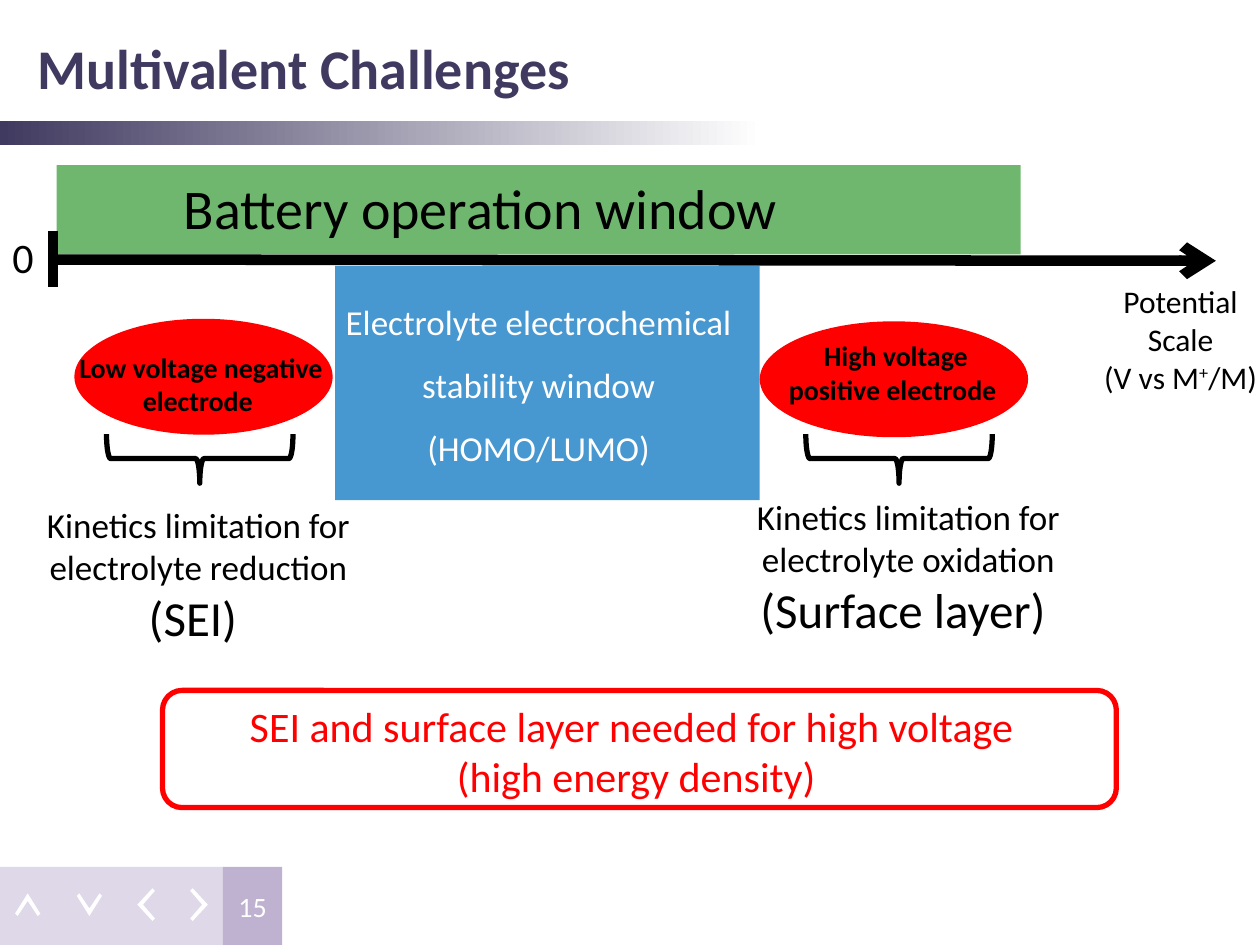
from dataclasses import dataclass

from lxml import etree
from pptx import Presentation
from pptx.dml.color import RGBColor
from pptx.enum.shapes import MSO_CONNECTOR, MSO_SHAPE
from pptx.enum.text import MSO_ANCHOR, MSO_AUTO_SIZE, PP_ALIGN
from pptx.oxml.ns import qn
from pptx.util import Inches, Pt

RECT, ROUND, OVAL, BRACE = (MSO_SHAPE.RECTANGLE, MSO_SHAPE.ROUNDED_RECTANGLE,
                            MSO_SHAPE.OVAL, MSO_SHAPE.RIGHT_BRACE)
STRAIGHT = MSO_CONNECTOR.STRAIGHT
LEFT, CENTER = PP_ALIGN.LEFT, PP_ALIGN.CENTER
MIDDLE, TOP = MSO_ANCHOR.MIDDLE, MSO_ANCHOR.TOP
TITLE_ONLY = 5
COLS, ROWS = 100, 75  # square grid cells over the whole slide


@dataclass(frozen=True)
class Theme:
    font: str = "Calibri"
    ink: str = "000000"
    paper: str = "FFFFFF"
    title: str = "403A60"
    nav: str = "DFD8E8"
    number: str = "BFB2D0"
    battery: str = "339933"
    electrolyte: str = "0070C0"
    alert: str = "FF0000"
    heading: int = 32
    large: int = 28
    medium: int = 24
    body: int = 20
    label: int = 18
    small: int = 16
    thick: int = 6
    thin: int = 3


class SlideBuilder:
    def __init__(self, prs, theme):
        self.theme = theme
        self.cell_w, self.cell_h = prs.slide_width / COLS, prs.slide_height / ROWS
        self.s = prs.slides.add_slide(prs.slide_layouts[TITLE_ONLY])

    def x(self, cols):
        return round(cols * self.cell_w)

    def y(self, rows):
        return round(rows * self.cell_h)

    def box(self, left, top, width, height):
        return self.x(left), self.y(top), self.x(width), self.y(height)

    def set_text(self, shape, lines, size, color=None, bold=False, align=CENTER,
                 anchor=TOP, spacing=None):
        """Fill a shape with lines: text or (text, size); ^ encloses superscript."""
        tf = shape.text_frame
        tf.word_wrap, tf.auto_size = True, MSO_AUTO_SIZE.NONE
        tf.vertical_anchor = anchor
        for i, line in enumerate(lines):
            text, pt = line if isinstance(line, tuple) else (line, size)
            p = tf.add_paragraph() if i else tf.paragraphs[0]
            p.alignment = align
            if spacing:
                p.line_spacing = Pt(spacing)
            for j, part in enumerate(text.split("^")):
                r = p.add_run()
                r.text = part
                if j % 2:
                    r._r.get_or_add_rPr().set("baseline", "30000")
            p.font.name, p.font.size, p.font.bold = self.theme.font, Pt(pt), bold
            p.font.color.rgb = RGBColor.from_string(color or self.theme.ink)

    def title(self, at, text):
        sp = self.s.shapes.title
        sp.left, sp.top, sp.width, sp.height = self.box(*at)
        self.set_text(sp, [text], self.theme.heading, self.theme.title, True, LEFT, MIDDLE)

    def text(self, at, lines, size, **style):
        self.set_text(self.s.shapes.add_textbox(*self.box(*at)), lines, size, **style)

    def shape(self, kind, at, fill=None, line=None, opacity=None, rotation=0):
        sp = self.s.shapes.add_shape(kind, *self.box(*at))
        self.paint(sp, fill, line)
        sp.rotation = rotation
        if opacity:
            color = sp._element.spPr.find(qn("a:solidFill")).find(qn("a:srgbClr"))
            etree.SubElement(color, qn("a:alpha"), val=str(opacity * 1000))
        return sp

    def paint(self, sp, fill=None, line=None):
        sp.shadow.inherit = False
        if fill:
            sp.fill.solid()
            sp.fill.fore_color.rgb = RGBColor.from_string(fill)
        else:
            sp.fill.background()
        if line:
            sp.line.color.rgb = RGBColor.from_string(line)
            sp.line.width = Pt(self.theme.thin)
        else:
            sp.line.fill.background()

    def fade(self, at, start, end):
        sp = self.shape(RECT, at)
        sp.fill.gradient()
        sp.fill.gradient_angle = 0
        for stop, color, position in zip(sp.fill.gradient_stops, (start, end), (0, 0.93)):
            stop.color.rgb = RGBColor.from_string(color)
            stop.position = position

    def line(self, x1, y1, x2, y2, arrow=False):
        c = self.s.shapes.add_connector(STRAIGHT, self.x(x1), self.y(y1),
                                        self.x(x2), self.y(y2))
        c.line.color.rgb = RGBColor.from_string(self.theme.ink)
        c.line.width = Pt(self.theme.thick)
        if arrow:
            etree.SubElement(c._element.spPr.find(qn("a:ln")), qn("a:tailEnd"), type="arrow")
        etree.SubElement(c._element.spPr, qn("a:effectLst"))

    def chevron(self, x, y, dx, dy):
        """Draw a chevron with its tip at x, y, pointing along dx, dy."""
        half, arm, end, inner, notch = ((1.3, 1.2, 1.4, 1.1, 0.45) if dx
                                        else (1, 1.6, 1.8, 0.8, 0.6))
        outline = [(0, 0), (arm, half), (end, inner), (notch, 0),
                   (end, -inner), (arm, -half)]
        points = [(self.x(x - dx * back + dy * side), self.y(y - dy * back + dx * side))
                  for back, side in outline]
        fb = self.s.shapes.build_freeform(*points[0])
        fb.add_line_segments(points[1:], close=True)
        self.paint(fb.convert_to_shape(), self.theme.paper)


def main():
    prs = Presentation()
    prs.slide_width, prs.slide_height = Inches(10), Inches(7.5)
    t = Theme()
    b = SlideBuilder(prs, t)

    b.shape(RECT, (0, 68.8, 17.7, 6.2), t.nav)
    for tip in ((2.2, 70.9, 0, -1), (7.1, 72.7, 0, 1),
                (10.9, 71.8, -1, 0), (16.5, 71.8, 1, 0)):
        b.chevron(*tip)
    page = b.shape(RECT, (17.7, 68.8, 4.7, 6.2), t.number)
    b.set_text(page, ["15"], t.small, t.paper, anchor=MIDDLE)

    b.fade((0, 9.6, 65.1, 1.9), t.title, t.paper)
    b.title((2, 2.4, 73.2, 5.9), "Multivalent Challenges")

    b.shape(ROUND, (12.9, 54.8, 75.7, 9.3), t.paper, t.alert)
    b.text((13, 55.1, 75, 9.1), ["SEI and surface layer needed for high voltage ",
                                 "(high energy density)"], t.medium, color=t.alert)

    b.shape(RECT, (4.5, 13.1, 76.5, 7.1), t.battery, opacity=70)
    b.text((13.6, 13.3, 66.7, 6.4), ["Battery operation window"], t.heading, align=LEFT)
    b.line(4.4, 20.6, 96.5, 20.7, arrow=True)
    b.line(4.2, 18.3, 4.2, 22.8)
    b.text((0, 17.9, 4.4, 5.1), ["0"], t.medium, align=LEFT)
    b.text((84.6, 21.9, 18.2, 10.1), ["Potential", "Scale", "(V vs M^+^/M)"], t.label)

    b.shape(RECT, (26.6, 21.1, 33.7, 18.6), t.electrolyte, opacity=72)
    b.text((23.4, 21.7, 38.7, 16.2),
           ["Electrolyte electrochemical stability window (HOMO/LUMO)"],
           t.body, color=t.paper, spacing=36)

    electrodes = (
        ((5.9, 25.3, 20.5, 9.2), (5.2, 27.3, 21.5, 6.4), "Low voltage negative electrode ",
         13.9, (1.3, 39.5, 28.9, 12.4), "reduction", "(SEI) "),
        ((60.3, 25.5, 21.3, 9.2), (61.2, 26.4, 19.8, 6.4), "High voltage positive electrode ",
         69.4, (55.6, 38.8, 33, 12.4), "oxidation", "(Surface layer) "),
    )
    for oval, name_at, name, brace_x, note_at, reaction, layer in electrodes:
        b.shape(OVAL, oval, t.alert)
        b.text(name_at, [name], t.small, bold=True)
        b.shape(BRACE, (brace_x, 29, 3.9, 14.8), line=t.ink, rotation=90)
        b.text(note_at, [f"Kinetics limitation for electrolyte {reaction}",
                         (layer, t.large)], t.body)

    prs.save("out.pptx")


if __name__ == "__main__":
    main()
